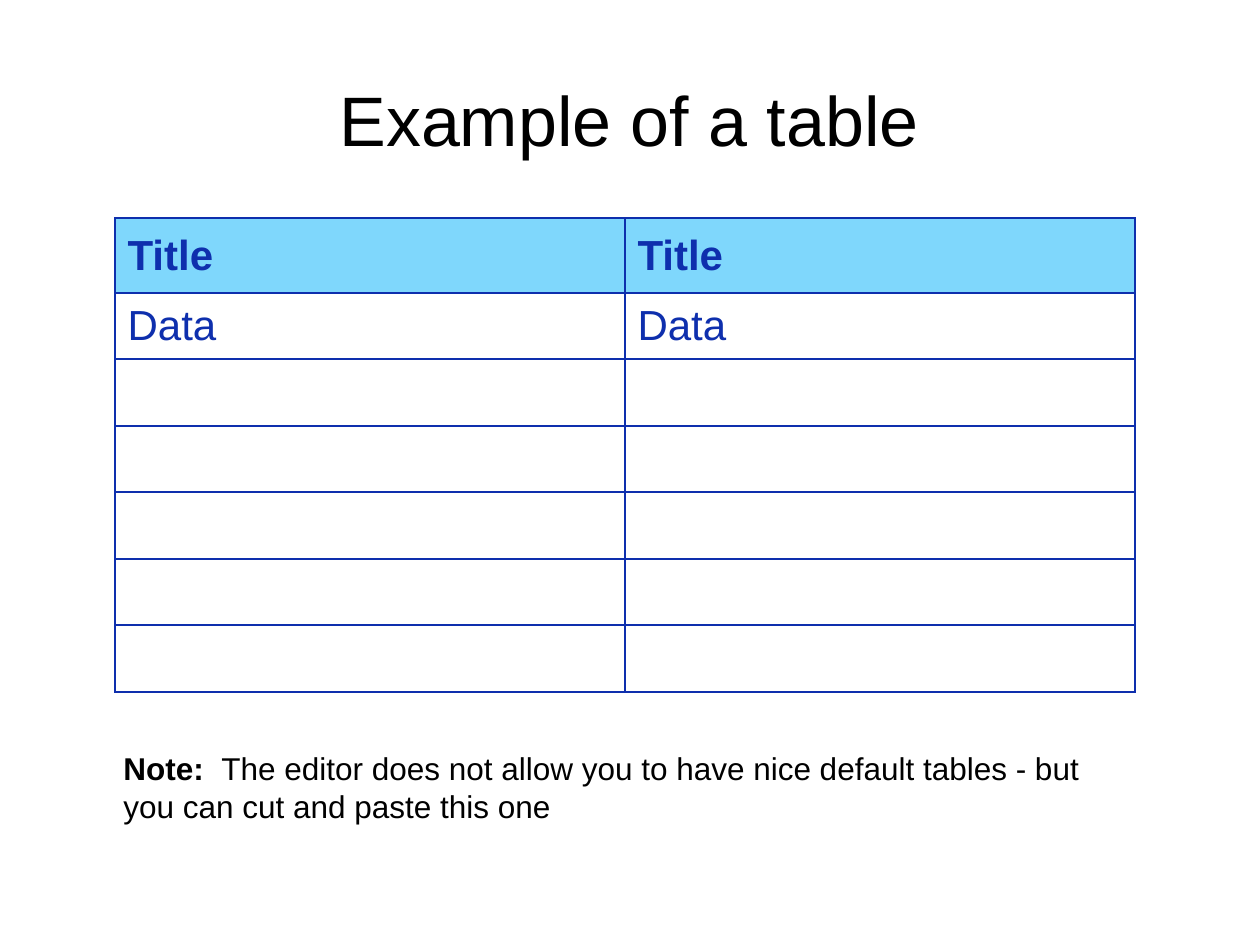
"""Build a slide showing an example two-column table with a note below it."""
from dataclasses import dataclass

from lxml import etree
from pptx import Presentation
from pptx import util as u
from pptx.dml.color import RGBColor
from pptx.enum import shapes, text
from pptx.oxml.ns import qn


@dataclass(frozen=True)
class Theme:
    font: str = "Arial"
    ink: str = "000000"
    paper: str = "FFFFFF"
    accent: str = "0E2FAD"
    header: str = "7FD7FC"
    title_size: int = 40
    cell_size: int = 24
    note_size: int = 18
    border_width: int = 1


@dataclass(frozen=True)
class Box:
    left: int
    top: int
    width: int
    height: int

    def emu(self) -> tuple:
        return tuple(px(n) for n in (self.left, self.top, self.width, self.height))


@dataclass(frozen=True)
class Row:
    labels: tuple
    height: int
    header: bool = False


THEME = Theme()
PX_PER_INCH = 126
TITLE_BOX = Box(62, 40, 1134, 158)
TABLE_BOX = Box(115, 218, 1020, 474)
NOTE_BOX = Box(111, 743, 1036, 89)
HEADER_HEIGHT = 75
BODY_ROWS = 6


def px(count: int) -> u.Emu:
    return u.Emu(round(count * 914400 / PX_PER_INCH))


def style_run(run, size: int, color: str, bold: bool = False) -> None:
    run.font.name = THEME.font
    run.font.size = u.Pt(size)
    run.font.bold = bold
    run.font.color.rgb = RGBColor.from_string(color)


def table_rows() -> list[Row]:
    body_height = TABLE_BOX.height - HEADER_HEIGHT
    edges = [body_height * i // BODY_ROWS for i in range(BODY_ROWS + 1)]
    labels = [("Data", "Data")] + [("", "")] * (BODY_ROWS - 1)
    body = [Row(pair, end - start) for pair, start, end in zip(labels, edges, edges[1:])]
    return [Row(("Title", "Title"), HEADER_HEIGHT, True)] + body


def draw_borders(cell) -> None:
    properties = cell._tc.get_or_add_tcPr()
    for side in ("a:lnL", "a:lnR", "a:lnT", "a:lnB"):
        border = etree.SubElement(properties, qn(side), w=str(u.Pt(THEME.border_width)))
        fill = etree.SubElement(border, qn("a:solidFill"))
        etree.SubElement(fill, qn("a:srgbClr"), val=THEME.accent)


def draw_cell(cell, label: str, header: bool) -> None:
    draw_borders(cell)
    if header:
        cell.fill.solid()
        cell.fill.fore_color.rgb = RGBColor.from_string(THEME.header)
    else:
        cell.fill.background()
    cell.vertical_anchor = text.MSO_ANCHOR.MIDDLE
    if label:
        cell.text_frame.text = label
        style_run(cell.text_frame.paragraphs[0].runs[0], THEME.cell_size, THEME.accent, header)


def draw_table(slide, rows: list[Row]) -> None:
    columns = len(rows[0].labels)
    table = slide.shapes.add_table(len(rows), columns, *TABLE_BOX.emu()).table
    table.first_row = table.horz_banding = False
    for column in table.columns:
        column.width = px(TABLE_BOX.width // columns)
    for r, row in enumerate(rows):
        table.rows[r].height = px(row.height)
        for c, label in enumerate(row.labels):
            draw_cell(table.cell(r, c), label, row.header)


def draw_title(slide, heading: str) -> None:
    title = slide.shapes.title
    title.left, title.top, title.width, title.height = TITLE_BOX.emu()
    title.text_frame.text = heading
    title.text_frame.vertical_anchor = text.MSO_ANCHOR.MIDDLE
    paragraph = title.text_frame.paragraphs[0]
    paragraph.alignment = text.PP_ALIGN.CENTER
    style_run(paragraph.runs[0], THEME.title_size, THEME.ink)


def draw_note(slide, lead: str, message: str) -> None:
    note = slide.shapes.add_shape(shapes.MSO_SHAPE.RECTANGLE, *NOTE_BOX.emu())
    note.shadow.inherit = False
    note.line.fill.background()
    note.fill.solid()
    note.fill.fore_color.rgb = RGBColor.from_string(THEME.paper)
    paper = note._element.spPr.find(qn("a:solidFill")).find(qn("a:srgbClr"))
    etree.SubElement(paper, qn("a:alpha"), val="50000")
    frame = note.text_frame
    frame.word_wrap = True
    frame.auto_size = text.MSO_AUTO_SIZE.SHAPE_TO_FIT_TEXT
    frame.vertical_anchor = text.MSO_ANCHOR.TOP
    paragraph = frame.paragraphs[0]
    paragraph.alignment = text.PP_ALIGN.LEFT
    for words, bold in ((lead, True), (message, False)):
        run = paragraph.add_run()
        run.text = words
        style_run(run, THEME.note_size, THEME.ink, bold)


def main() -> None:
    deck = Presentation()
    deck.slide_width, deck.slide_height = px(1260), px(945)
    slide = deck.slides.add_slide(deck.slide_layouts.get_by_name("Title Only"))
    draw_title(slide, "Example of a table")
    draw_table(slide, table_rows())
    draw_note(
        slide,
        "Note:  ",
        "The editor does not allow you to have nice default tables - but "
        "you can cut and paste this one",
    )
    deck.save("out.pptx")


if __name__ == "__main__":
    main()
